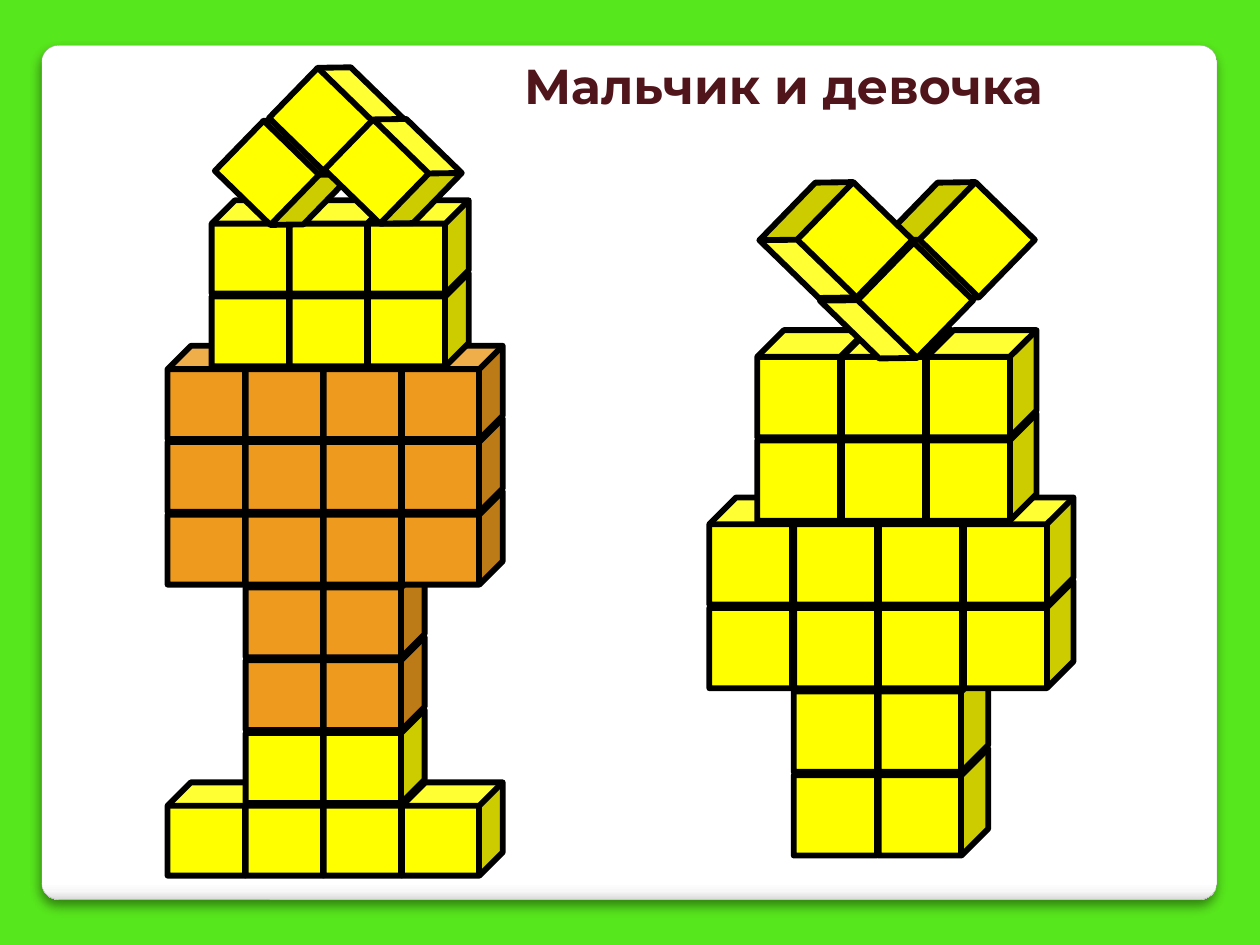
"""Build the slide of a boy and a girl made of cubes."""
from dataclasses import dataclass

from lxml.etree import SubElement as Sub
from pptx import Presentation
from pptx.dml.color import RGBColor as RGB
from pptx.enum.shapes import MSO_SHAPE as Kind
from pptx.enum.text import MSO_ANCHOR as Anchor, MSO_AUTO_SIZE as Auto, PP_ALIGN as Align
from pptx.oxml.ns import qn
from pptx.util import Inches, Pt


@dataclass
class Theme:
    green: str = "57E71D"
    yellow: str = "FFFF00"
    orange: str = "ED9A1F"
    black: str = "000000"
    edge: str = "A4A4A4"
    wine: str = "50141B"
    font: str = "Montserrat"
    size: float = 28
    line: float = 3.35


theme = Theme()


def paint(shape, fill, line, width):
    shape.shadow.inherit = False
    if fill:
        shape.fill.solid()
        shape.fill.fore_color.rgb = RGB.from_string(fill)
    shape.line.color.rgb = RGB.from_string(line)
    shape.line.width = Pt(width)


def cube(group, box, fill, turn=0):
    block = group.shapes.add_shape(Kind.CUBE, *map(Inches, box))
    block.rotation = turn
    paint(block, fill, theme.black, theme.line)


deck = Presentation()
deck.slide_width, deck.slide_height = Inches(10), Inches(7.5)
slide = deck.slides.add_slide(deck.slide_layouts[5])
slide.background.fill.solid()
slide.background.fill.fore_color.rgb = RGB.from_string(theme.green)

panel = slide.shapes.add_shape(
    Kind.ROUNDED_RECTANGLE, Inches(0.33), Inches(0.36), Inches(9.33), Inches(6.78))
panel.adjustments[0] = 0.02
panel.fill.gradient()
panel.fill.gradient_angle = 270
paint(panel, None, theme.edge, 0.16)
props = panel.element.spPr
stops = props.find(qn("a:gradFill")).find(qn("a:gsLst"))
stops.clear()
for spot, shade in [(0, "FFFFFF"), (98, "FFFFFF"), (99, "F7F7F7"), (100, "DADADA")]:
    stop = Sub(stops, qn("a:gs"), pos=str(spot * 1000))
    Sub(stop, qn("a:srgbClr"), val=shade)
shade = Sub(props.find(qn("a:effectLst")), qn("a:outerShdw"), blurRad=str(Pt(6)),
            dist=str(Pt(4)), dir="5400000", algn="t", rotWithShape="0")
Sub(Sub(shade, qn("a:srgbClr"), val=theme.black), qn("a:alpha"), val="44000")

boy = dict(
    size=(0.8, 0.74), base=6.21, step=(0.62, 4.62 / 8), turn=44.2,
    rows=[(1.33, 4, theme.yellow), (1.95, 2, theme.yellow)]
    + [(1.95, 2, theme.orange)] * 2 + [(1.33, 4, theme.orange)] * 3
    + [(1.68, 3, theme.yellow)] * 2,
    top=[(1.85, 1), (2.28, 0.58), (2.72, 0.99)])
girl = dict(
    size=(0.87, 0.85), base=5.94, step=(2.02 / 3, 3.32 / 5), turn=224.2,
    rows=[(6.3, 2, theme.yellow)] * 2 + [(5.63, 4, theme.yellow)] * 2
    + [(6.01, 3, theme.yellow)] * 2,
    top=[(7.17, 1.48), (6.68, 1.96), (6.2, 1.48)])

for child in (boy, girl):
    group = slide.shapes.add_group_shape()
    across, up = child["step"]
    for row, (left, count, fill) in enumerate(child["rows"]):
        for col in range(count):
            spot = (left + col * across, child["base"] - row * up)
            cube(group, spot + child["size"], fill)
    for spot in child["top"]:
        cube(group, spot + child["size"], theme.yellow, child["turn"])

title = slide.shapes.title
title.element.getparent().append(title.element)
title.left, title.top = Inches(4.06), Inches(0.39)
title.width, title.height = Inches(4.6), Inches(0.57)
frame = title.text_frame
frame.text = "Мальчик и девочка"
frame.word_wrap = False
frame.auto_size = Auto.SHAPE_TO_FIT_TEXT
frame.vertical_anchor = Anchor.TOP
line = frame.paragraphs[0]
line.alignment = Align.LEFT
line.font.name, line.font.size, line.font.bold = theme.font, Pt(theme.size), True
line.font.color.rgb = RGB.from_string(theme.wine)

deck.save("out.pptx")
